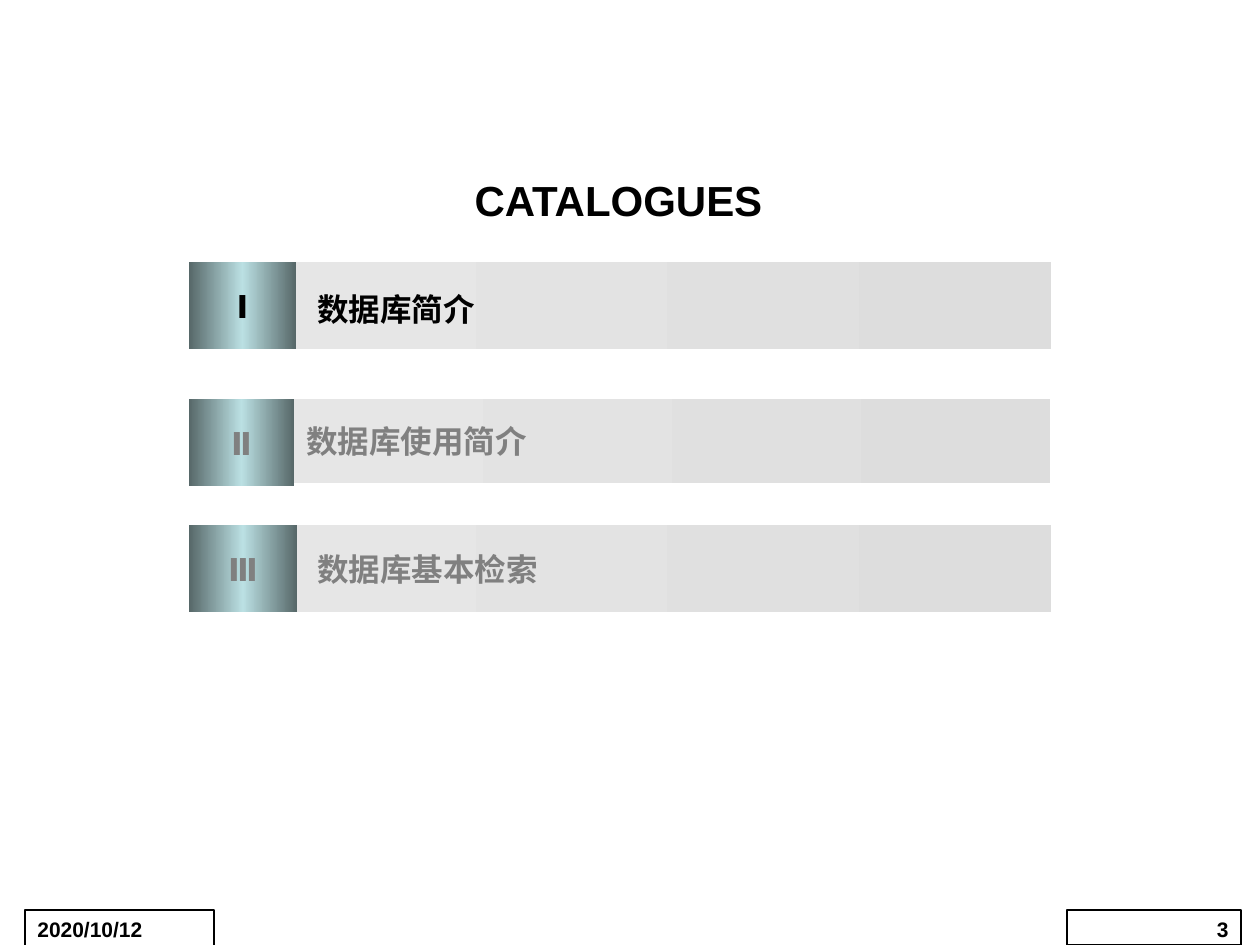
from dataclasses import dataclass
from typing import NamedTuple, Optional

from lxml import etree
from pptx import Presentation
from pptx.dml.color import RGBColor
from pptx.enum.shapes import MSO_SHAPE
from pptx.enum.text import MSO_ANCHOR, MSO_AUTO_SIZE, PP_ALIGN
from pptx.oxml.ns import qn
from pptx.util import Emu, Pt

RECT = MSO_SHAPE.RECTANGLE
TOP, MIDDLE = MSO_ANCHOR.TOP, MSO_ANCHOR.MIDDLE
LEFT, CENTER, RIGHT = PP_ALIGN.LEFT, PP_ALIGN.CENTER, PP_ALIGN.RIGHT
FIXED = MSO_AUTO_SIZE.NONE
SCALE = 914400 / 126


@dataclass(frozen=True)
class Theme:
    font: str = "Arial"
    ink: str = "000000"
    dim: str = "808080"
    paper: str = "FFFFFF"
    bar: tuple = ((0, "E6E6E6"), (100, "DDDDDD"))
    tile: tuple = ((0, "576869"), (50, "BBE0E3"), (100, "576869"))
    head: int = 24
    body: int = 18
    small: int = 12


class Box(NamedTuple):
    x: int
    y: int
    w: int
    h: int


class Row(NamedTuple):
    mark: str
    text: str
    color: str
    bar: Box
    tile: Box
    label: Optional[Box] = None


class Foot(NamedTuple):
    text: str
    box: Box
    align: PP_ALIGN


THEME = Theme()
TITLE = Box(462, 168, 316, 63)
ROWS = (
    Row("Ⅰ", "数据库简介", THEME.ink, Box(284, 262, 767, 87),
        Box(189, 262, 107, 87), Box(305, 284, 509, 50)),
    Row("Ⅱ", "数据库使用简介", THEME.dim, Box(294, 399, 756, 84),
        Box(189, 399, 105, 87)),
    Row("Ⅲ", "数据库基本检索", THEME.dim, Box(284, 525, 767, 87),
        Box(189, 525, 108, 87), Box(305, 544, 718, 50)),
)
FEET = (
    Foot("2020/10/12", Box(25, 910, 189, 59), LEFT),
    Foot("3", Box(1067, 910, 174, 35), RIGHT),
)


def emu(px: int) -> Emu:
    return Emu(round(px * SCALE))


def place(box: Box) -> tuple:
    return tuple(emu(px) for px in box)


def write(shape, text: str, *, size: int = THEME.body, color: str = THEME.ink,
          align: PP_ALIGN = LEFT, anchor: MSO_ANCHOR = MIDDLE,
          wrap: bool = False) -> None:
    frame = shape.text_frame
    frame.auto_size = FIXED
    frame.word_wrap = wrap
    frame.vertical_anchor = anchor
    para = frame.paragraphs[0]
    para.alignment = align
    run = para.add_run()
    run.text = text
    font = run.font
    font.name, font.size, font.bold = THEME.font, Pt(size), True
    font.color.rgb = RGBColor.from_string(color)


def add_rect(slide, box: Box):
    shape = slide.shapes.add_shape(RECT, *place(box))
    shape.shadow.inherit = False
    shape.line.fill.background()
    return shape


def add_blend(slide, box: Box, stops: tuple):
    shape = add_rect(slide, box)
    shape.fill.gradient()
    shape.fill.gradient_angle = 0
    ramp = shape.fill.gradient_stops[0]._gs.getparent()
    for stop in list(ramp):
        ramp.remove(stop)
    for spot, color in stops:
        stop = etree.SubElement(ramp, qn("a:gs"), pos=str(spot * 1000))
        etree.SubElement(stop, qn("a:srgbClr"), val=color)
    return shape


def add_row(slide, row: Row) -> None:
    bar = add_blend(slide, row.bar, THEME.bar)
    tile = add_blend(slide, row.tile, THEME.tile)
    write(tile, row.mark, color=row.color, align=CENTER)
    if row.label:
        label = slide.shapes.add_textbox(*place(row.label))
        write(label, row.text, color=row.color, wrap=True)
    else:
        write(bar, row.text, color=row.color)


def add_foot(slide, foot: Foot) -> None:
    shape = add_rect(slide, foot.box)
    shape.fill.solid()
    shape.fill.fore_color.rgb = RGBColor.from_string(THEME.paper)
    shape.line.color.rgb = RGBColor.from_string(THEME.ink)
    shape.line.width = Pt(0.75)
    write(shape, foot.text, size=THEME.small, align=foot.align,
          anchor=TOP, wrap=True)


def main() -> None:
    deck = Presentation()
    deck.slide_width, deck.slide_height = emu(1260), emu(945)
    slide = deck.slides.add_slide(deck.slide_layouts[5])
    title = slide.shapes.title
    title.left, title.top, title.width, title.height = place(TITLE)
    write(title, "CATALOGUES", size=THEME.head, anchor=TOP)
    for row in ROWS:
        add_row(slide, row)
    for foot in FEET:
        add_foot(slide, foot)
    deck.save("out.pptx")


if __name__ == "__main__":
    main()
